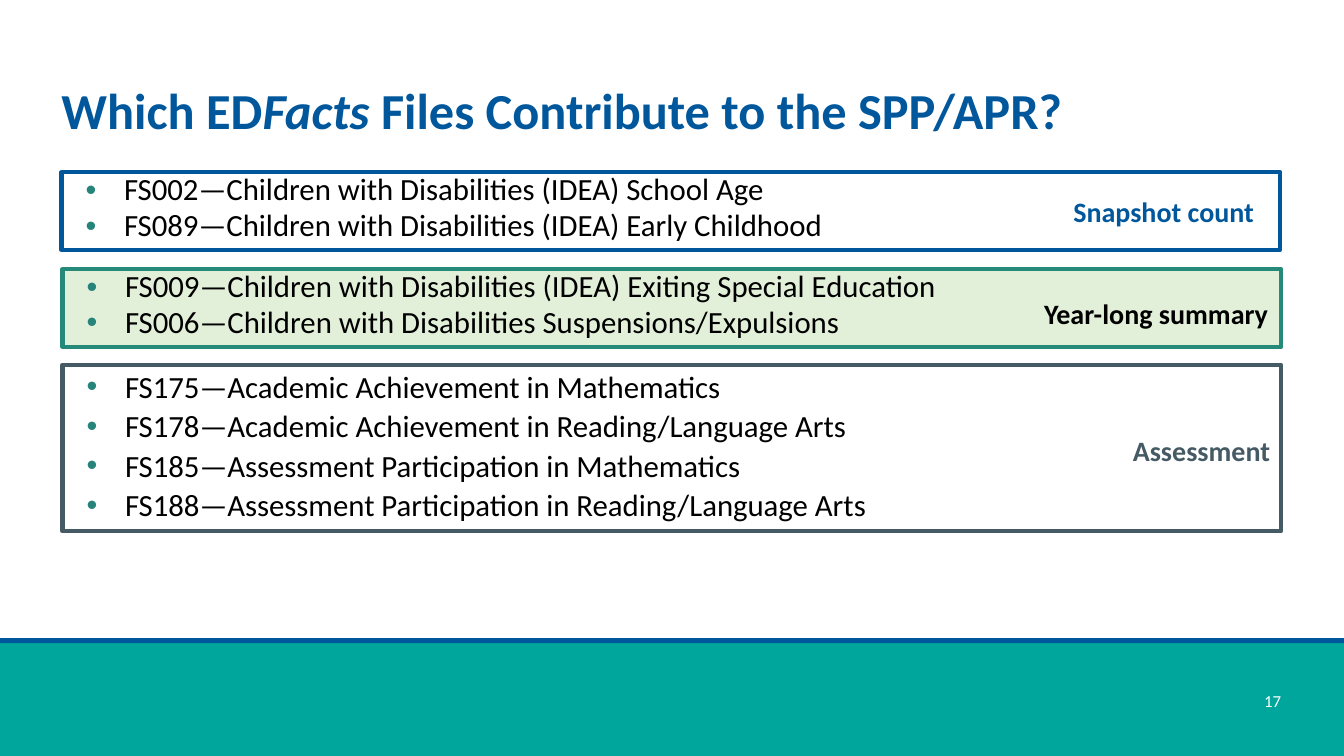
"""Build the slide that groups the EDFacts files behind the SPP/APR."""
from lxml.etree import SubElement
from pptx import Presentation
from pptx.dml.color import RGBColor
from pptx.enum.shapes import MSO_SHAPE
from pptx.enum.text import MSO_ANCHOR, PP_ALIGN
from pptx.oxml.ns import qn
from pptx.util import Inches, Pt

C = {"blue": "01579B", "teal": "00A59B", "green": "268A7A", "mint": "E2F0D9",
     "slate": "455A64", "bullet": "26847A", "black": "000000", "white": "FFFFFF"}

prs = Presentation()
prs.slide_width, prs.slide_height = Inches(13.33), Inches(7.5)
col, row = prs.slide_width / 40, prs.slide_height / 30
s = prs.slides.add_slide(prs.slide_layouts[6])


def add_box(x, y, w, h, fill=None, line=None, inset=0, anchor=MSO_ANCHOR.MIDDLE):
    sp = s.shapes.add_shape(MSO_SHAPE.RECTANGLE, int(x * col), int(y * row),
                            int(w * col), int(h * row))
    sp.shadow.inherit = False
    for part, color in ((sp.fill, fill), (sp.line.fill, line)):
        if color:
            part.solid()
            part.fore_color.rgb = RGBColor.from_string(C[color])
        else:
            part.background()
    if line:
        sp.line.width = Pt(3)
    tf = sp.text_frame
    tf.word_wrap = True
    tf.vertical_anchor = anchor
    tf.margin_left = tf.margin_right = Inches(inset)
    tf.margin_top = tf.margin_bottom = Inches(inset / 2)
    return tf


def write(p, text, size=22, color="black", bold=False, italic=False, align=PP_ALIGN.LEFT):
    p.alignment = align
    r = p.add_run()
    r.text = text
    r.font.name, r.font.size = "Calibri", Pt(size)
    r.font.bold, r.font.italic = bold, italic
    r.font.color.rgb = RGBColor.from_string(C[color])


add_box(0, 25.52, 40, 4.48, fill="teal")
add_box(0, 25.32, 40, 0.2, fill="blue")

p = add_box(1.83, 1.6, 36.27, 5.8).paragraphs[0]
p.line_spacing = 0.9
for text, italic in (("Which ED", False), ("Facts", True),
                     (" Files Contribute to the SPP/APR?", False)):
    write(p, text, size=36, color="blue", bold=True, italic=italic)

groups = [
    (1.83, 6.84, 3.08, None, "blue", 0.97, ("Snapshot count", "blue", 28.71, 7.52),
     ["FS002—Children with Disabilities (IDEA) School Age",
      "FS089—Children with Disabilities (IDEA) Early Childhood"]),
    (1.86, 10.68, 3.08, "mint", "green", 0.97, ("Year-long summary", "black", 29.13, 11.56),
     ["FS009—Children with Disabilities (IDEA) Exiting Special Education",
      "FS006—Children with Disabilities Suspensions/Expulsions"]),
    (1.86, 14.48, 6.6, None, "slate", 1.07, ("Assessment", "slate", 29.19, 17),
     ["FS175—Academic Achievement in Mathematics",
      "FS178—Academic Achievement in Reading/Language Arts",
      "FS185—Assessment Participation in Mathematics",
      "FS188—Assessment Participation in Reading/Language Arts"]),
]
for x, y, h, fill, line, spacing, (label, color, label_x, label_y), files in groups:
    tf = add_box(x, y, 36.27, h, fill=fill, line=line, anchor=MSO_ANCHOR.TOP)
    for i, name in enumerate(files):
        p = tf.paragraphs[0] if i == 0 else tf.add_paragraph()
        pPr = p._p.get_or_add_pPr()
        pPr.set("marL", str(Inches(0.62)))
        pPr.set("indent", str(Inches(-0.38)))
        SubElement(SubElement(pPr, qn("a:buClr")), qn("a:srgbClr"), val=C["bullet"])
        SubElement(pPr, qn("a:buFont"), typeface="Arial")
        SubElement(pPr, qn("a:buChar"), char="•")
        p.line_spacing = spacing
        write(p, name)
    tf = add_box(label_x, label_y, 8.91, 1.76, inset=0.1, anchor=MSO_ANCHOR.TOP)
    write(tf.paragraphs[0], label, size=20, color=color, bold=True, align=PP_ALIGN.RIGHT)

tf = add_box(36.72, 26.68, 1.41, 2.24)
write(tf.paragraphs[0], "17", size=12, color="white", align=PP_ALIGN.RIGHT)

prs.save("out.pptx")
